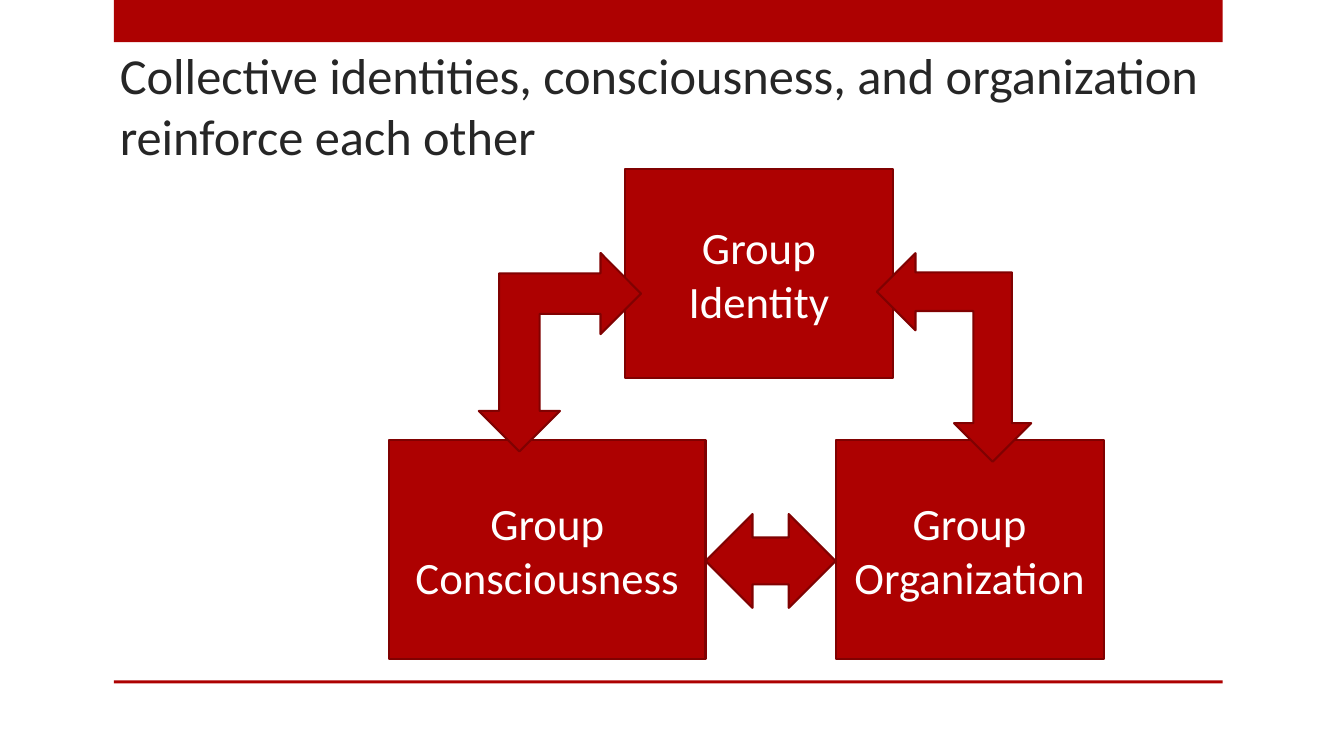
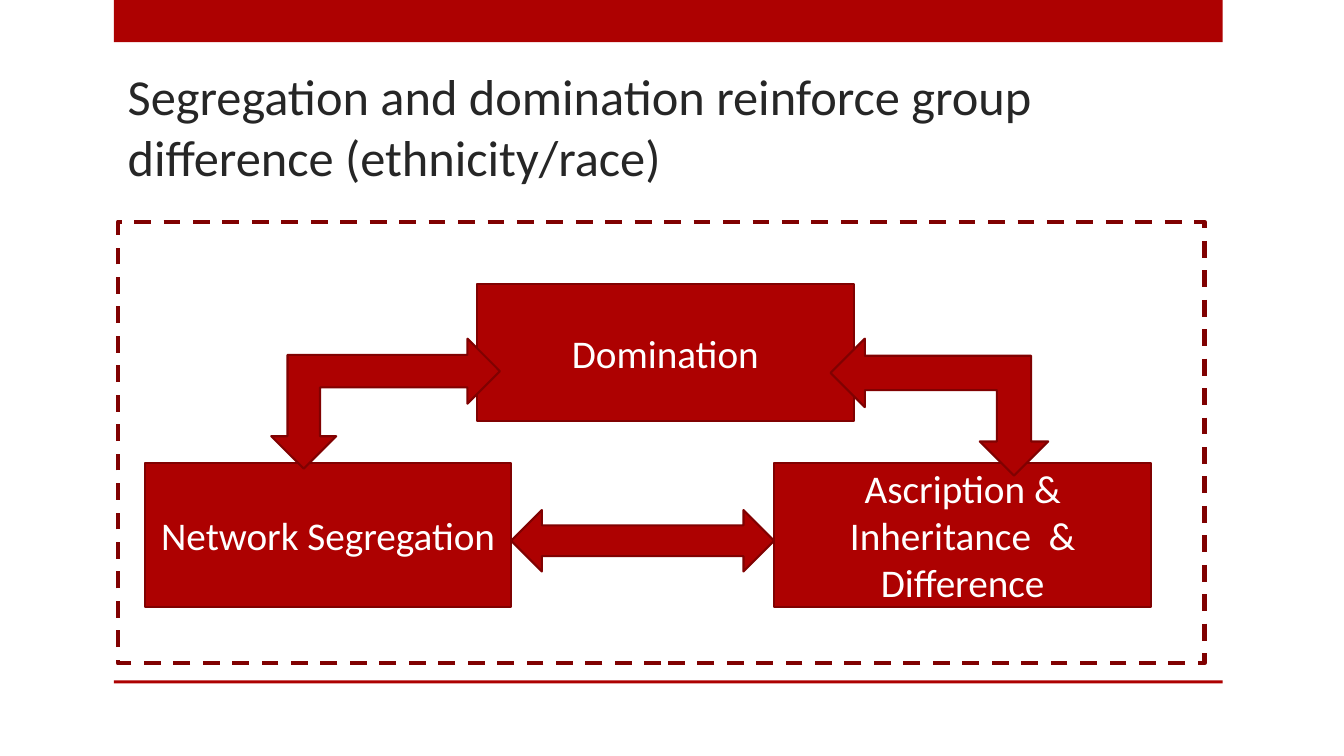
"""Build two slides that show three concepts reinforcing each other."""
from dataclasses import dataclass
from typing import NamedTuple, Optional

from pptx import Presentation
from pptx.dml.color import RGBColor
from pptx.enum.dml import MSO_LINE
from pptx.enum.shapes import MSO_SHAPE
from pptx.enum.text import MSO_ANCHOR, PP_ALIGN
from pptx.util import Pt

RED = "AD0101"
DARK_RED = "800101"
WHITE = "FFFFFF"
CHARCOAL = "262626"
FONT = "Calibri"


class Frame(NamedTuple):
    left: float
    top: float
    width: float
    height: float

    @property
    def right(self) -> float:
        return self.left + self.width


class Concept(NamedTuple):
    text: str
    frame: Frame


@dataclass(frozen=True)
class Triangle:
    title: str
    title_frame: Frame
    size: float
    upper: Concept
    lower_left: Concept
    lower_right: Concept
    left_elbow: Frame
    right_elbow: Frame
    link_top: float
    link_height: float
    border: Optional[Frame] = None


BANDS = (Frame(81.4, 0, 792, 30.2), Frame(81.4, 486, 792, 2.2))

TRIANGLES = (
    Triangle(
        title="Collective identities, consciousness, and organization reinforce each other",
        title_frame=Frame(78.5, 48.2, 794.9, 73.4),
        size=32,
        upper=Concept("Group Identity", Frame(446.4, 121, 191.5, 149)),
        lower_left=Concept("Group Consciousness", Frame(277.9, 314.6, 226.1, 156.2)),
        lower_right=Concept("Group Organization", Frame(596.9, 314.6, 191.5, 156.2)),
        left_elbow=Frame(342, 180.7, 115.9, 141.8),
        right_elbow=Frame(607, 200.2, 149, 110.2),
        link_top=367.2,
        link_height=67,
    ),
    Triangle(
        title="Segregation and domination reinforce group difference (ethnicity/race)",
        title_frame=Frame(84.2, 48.2, 789.1, 88.6),
        size=28,
        upper=Concept("Domination", Frame(340.6, 203, 269.3, 97.9)),
        lower_left=Concept("Network Segregation", Frame(103.7, 330.5, 261.4, 103)),
        lower_right=Concept("Ascription & Inheritance  & Difference",
                            Frame(553, 330.5, 269.3, 103)),
        left_elbow=Frame(193.7, 241.9, 163.4, 92.9),
        right_elbow=Frame(622.1, 213.1, 97.9, 155.5),
        link_top=364.3,
        link_height=43.9,
        border=Frame(84.2, 158.4, 776.2, 315.4),
    ),
)


def paint(target, color: str) -> None:
    target.solid()
    target.fore_color.rgb = RGBColor.from_string(color)


def points(frame: Frame) -> list:
    return [Pt(length) for length in frame]


def write(box, text: str, *, size: float, color: str,
          align=PP_ALIGN.LEFT, anchor=MSO_ANCHOR.MIDDLE) -> None:
    text_frame = box.text_frame
    text_frame.word_wrap = True
    text_frame.vertical_anchor = anchor
    para = text_frame.paragraphs[0]
    para.alignment = align
    span = para.add_run()
    span.text = text
    span.font.name = FONT
    span.font.size = Pt(size)
    paint(span.font.fill, color)


def add_figure(page, kind, frame: Frame, *, fill: Optional[str] = RED,
               line: Optional[str] = DARK_RED, weight: float = 1.5,
               rotation: float = 0):
    figure = page.shapes.add_shape(kind, *points(frame))
    figure.shadow.inherit = False
    figure.rotation = rotation
    if fill:
        paint(figure.fill, fill)
    else:
        figure.fill.background()
    if line:
        paint(figure.line.fill, line)
        figure.line.width = Pt(weight)
    else:
        figure.line.fill.background()
    return figure


def add_page(deck, title: str, title_frame: Frame):
    page = deck.slides.add_slide(deck.slide_layouts[6])
    for band in BANDS:
        add_figure(page, MSO_SHAPE.RECTANGLE, band, line=None)
    box = page.shapes.add_textbox(*points(title_frame))
    write(box, title, size=36, color=CHARCOAL, anchor=MSO_ANCHOR.BOTTOM)
    return page


def draw_triangle(deck, triangle: Triangle) -> None:
    page = add_page(deck, triangle.title, triangle.title_frame)
    for concept in (triangle.upper, triangle.lower_left, triangle.lower_right):
        box = add_figure(page, MSO_SHAPE.RECTANGLE, concept.frame)
        write(box, concept.text, size=triangle.size, color=WHITE, align=PP_ALIGN.CENTER)
    for elbow, rotation in ((triangle.left_elbow, 180), (triangle.right_elbow, 270)):
        add_figure(page, MSO_SHAPE.LEFT_UP_ARROW, elbow, rotation=rotation)
    start = triangle.lower_left.frame.right
    gap = triangle.lower_right.frame.left - start
    link = Frame(start, triangle.link_top, gap, triangle.link_height)
    add_figure(page, MSO_SHAPE.LEFT_RIGHT_ARROW, link)
    if triangle.border:
        border = add_figure(page, MSO_SHAPE.RECTANGLE, triangle.border, fill=None, weight=3)
        border.line.dash_style = MSO_LINE.DASH


def main() -> None:
    deck = Presentation()
    deck.slide_width, deck.slide_height = Pt(960), Pt(540)
    for triangle in TRIANGLES:
        draw_triangle(deck, triangle)
    deck.save("out.pptx")


if __name__ == "__main__":
    main()
